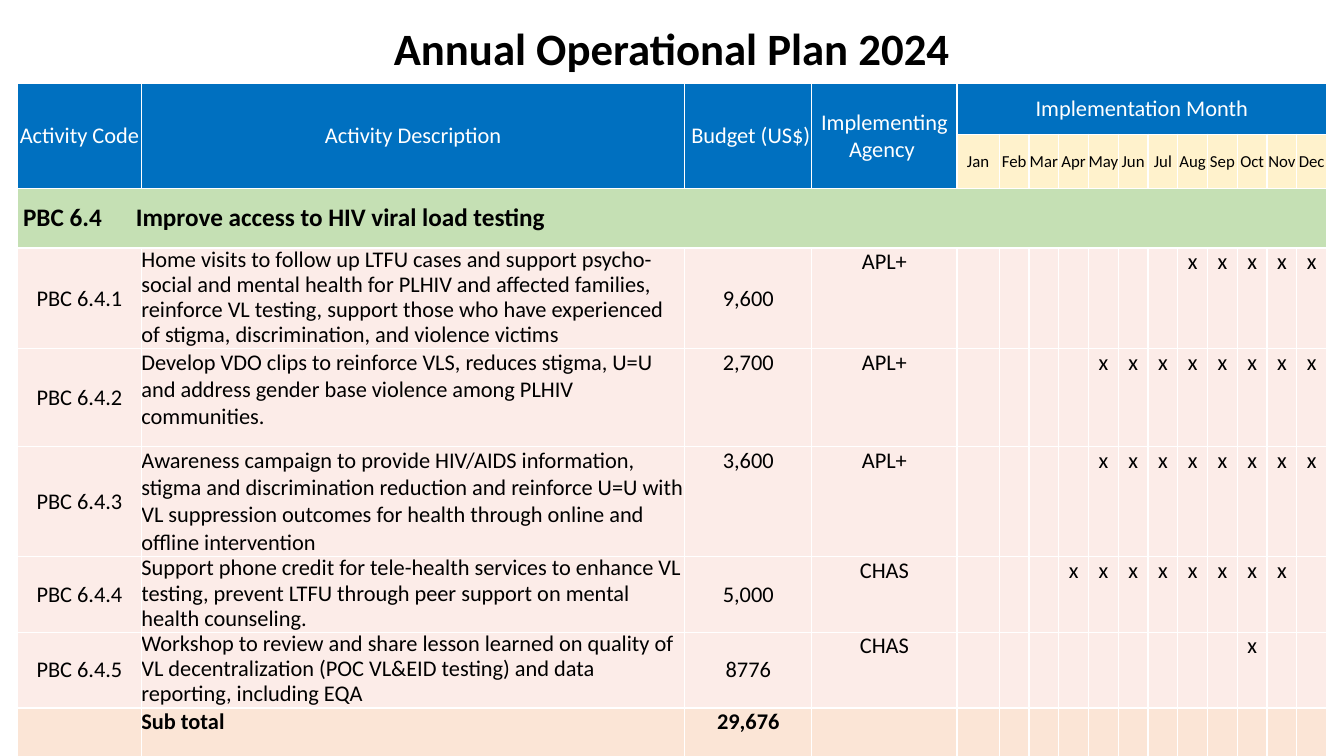
import pptx
import pptx.util
import pptx.dml.color
import pptx.enum.text
import pptx.oxml.ns
from lxml import etree

Pt = pptx.util.Pt
CENTER = pptx.enum.text.PP_ALIGN.CENTER
LEFT = pptx.enum.text.PP_ALIGN.LEFT
TOP = pptx.enum.text.MSO_ANCHOR.TOP
MIDDLE = pptx.enum.text.MSO_ANCHOR.MIDDLE
qn = pptx.oxml.ns.qn

THEME = {
    "font": "Calibri",
    "title": 32, "section": 18, "body": 16, "month": 12,
    "black": "000000", "white": "FFFFFF", "header": "0070C0",
    "months": "FFF2CC", "group": "C5E0B4", "activity": "FCECE8", "total": "FBE5D6",
}

MONTHS = ["Jan", "Feb", "Mar", "Apr", "May", "Jun",
          "Jul", "Aug", "Sep", "Oct", "Nov", "Dec"]
HEADINGS = ["Activity Code", "Activity Description", " Budget (US$) ",
            "Implementing Agency "]

# Code, description, exact line spacing, budget, budget anchor, agency, first and last month
ACTIVITIES = [
    ("PBC 6.4.1", "Home visits to follow up LTFU cases and support psycho-social and mental "
     "health for PLHIV and affected families, reinforce VL testing, support those who have "
     "experienced of stigma, discrimination, and violence victims",
     18, "9,600", MIDDLE, "APL+", "Aug", "Dec"),
    ("PBC 6.4.2", "Develop VDO clips to reinforce VLS, reduces stigma, U=U and address gender "
     "base violence among PLHIV communities.",
     None, "2,700", TOP, "APL+", "May", "Dec"),
    ("PBC 6.4.3", "Awareness campaign to provide HIV/AIDS information, stigma and "
     "discrimination reduction and reinforce U=U with VL suppression outcomes for health "
     "through online and offline intervention",
     None, "3,600", TOP, "APL+", "May", "Dec"),
    ("PBC 6.4.4", "Support phone credit for tele-health services to enhance VL testing, "
     "prevent LTFU through peer support on mental health counseling.",
     18, "5,000", MIDDLE, "CHAS", "Apr", "Nov"),
    ("PBC 6.4.5", "Workshop to review and share lesson learned on quality of VL "
     "decentralization (POC VL&EID testing) and data reporting, including EQA",
     18, "8776", MIDDLE, "CHAS", "Oct", "Oct"),
]
COLUMN_WIDTHS = [88.5, 388.2, 90.7, 103.7, 30.2] + [21.27] * 11
ROW_HEIGHTS = [36, 39, 42.4, 72, 70, 78.5, 54, 54, 38.2]
FIRST_MONTH = len(HEADINGS)


def style_text(paragraph, size, color="black", bold=False, align=CENTER):
    paragraph.alignment = align
    font = paragraph.font
    font.name, font.size, font.bold = THEME["font"], Pt(size), bold
    font.color.rgb = pptx.dml.color.RGBColor.from_string(THEME[color])


def write(row, column, text, size=THEME["body"], anchor=TOP, **style):
    cell = plan.cell(row, column)
    cell.text = text
    cell.vertical_anchor = anchor
    paragraph = cell.text_frame.paragraphs[0]
    style_text(paragraph, size, **style)
    return paragraph


presentation = pptx.Presentation()
presentation.slide_width, presentation.slide_height = Pt(960), Pt(540)
slide = presentation.slides.add_slide(presentation.slide_layouts[6])

# Title
title = slide.shapes.add_textbox(Pt(66), Pt(5), Pt(828), Pt(63.4)).text_frame
title.word_wrap = True
title.vertical_anchor = MIDDLE
title.text = "Annual Operational Plan 2024"
title.paragraphs[0].line_spacing = 0.9
style_text(title.paragraphs[0], THEME["title"], bold=True)

# Table grid
plan = slide.shapes.add_table(
    len(ROW_HEIGHTS), len(COLUMN_WIDTHS), Pt(12.5), Pt(59.8),
    Pt(sum(COLUMN_WIDTHS)), Pt(sum(ROW_HEIGHTS))).table
plan.first_row = plan.horz_banding = False
for column, width in zip(plan.columns, COLUMN_WIDTHS):
    column.width = Pt(width)
for row, height in zip(plan.rows, ROW_HEIGHTS):
    row.height = Pt(height)

# Margins, white borders and row fills
row_fills = ["header", "months", "group"] + ["activity"] * len(ACTIVITIES) + ["total"]
for r, row_fill in enumerate(row_fills):
    for c in range(len(COLUMN_WIDTHS)):
        cell = plan.cell(r, c)
        cell.margin_left = cell.margin_right = cell.margin_top = cell.margin_bottom = 0
        style_text(cell.text_frame.paragraphs[0], THEME["body"])
        properties = cell._tc.get_or_add_tcPr()
        for side in ("a:lnL", "a:lnR", "a:lnT", "a:lnB"):
            border = etree.SubElement(properties, qn(side), w=str(Pt(1)))
            paint = etree.SubElement(border, qn("a:solidFill"))
            etree.SubElement(paint, qn("a:srgbClr"), val=THEME["white"])
        cell.fill.solid()
        cell.fill.fore_color.rgb = pptx.dml.color.RGBColor.from_string(THEME[row_fill])

# Header rows
for c, heading in enumerate(HEADINGS):
    plan.cell(0, c).merge(plan.cell(1, c))
    write(0, c, heading, anchor=MIDDLE, color="white")
plan.cell(0, FIRST_MONTH).merge(plan.cell(0, len(COLUMN_WIDTHS) - 1))
write(0, FIRST_MONTH, "Implementation Month", anchor=MIDDLE, color="white")
for c, month in enumerate(MONTHS, FIRST_MONTH):
    write(1, c, month, THEME["month"], MIDDLE)

# Section row, with a tab between code and name
plan.cell(2, 0).merge(plan.cell(2, len(COLUMN_WIDTHS) - 1))
plan.cell(2, 0).margin_left = Pt(4)
section = write(2, 0, "PBC 6.4\tImprove access to HIV viral load testing",
                THEME["section"], MIDDLE, bold=True, align=LEFT)
tabs = etree.Element(qn("a:tabLst"))
etree.SubElement(tabs, qn("a:tab"), pos=str(Pt(80.5)), algn="l")
section._p.get_or_add_pPr().find(qn("a:defRPr")).addprevious(tabs)

# Activity rows
for r, (code, description, spacing, budget, anchor, agency, start, end) in enumerate(ACTIVITIES, 3):
    write(r, 0, code, anchor=MIDDLE)
    details = write(r, 1, description, align=LEFT)
    if spacing:
        details.line_spacing = Pt(spacing)
    write(r, 2, budget, anchor=anchor)
    write(r, 3, agency)
    for m in range(MONTHS.index(start), MONTHS.index(end) + 1):
        write(r, FIRST_MONTH + m, "x")

# Subtotal row
total_row = len(ROW_HEIGHTS) - 1
write(total_row, 1, "Sub total", bold=True, align=LEFT)
write(total_row, 2, "29,676", bold=True)

presentation.save("out.pptx")
